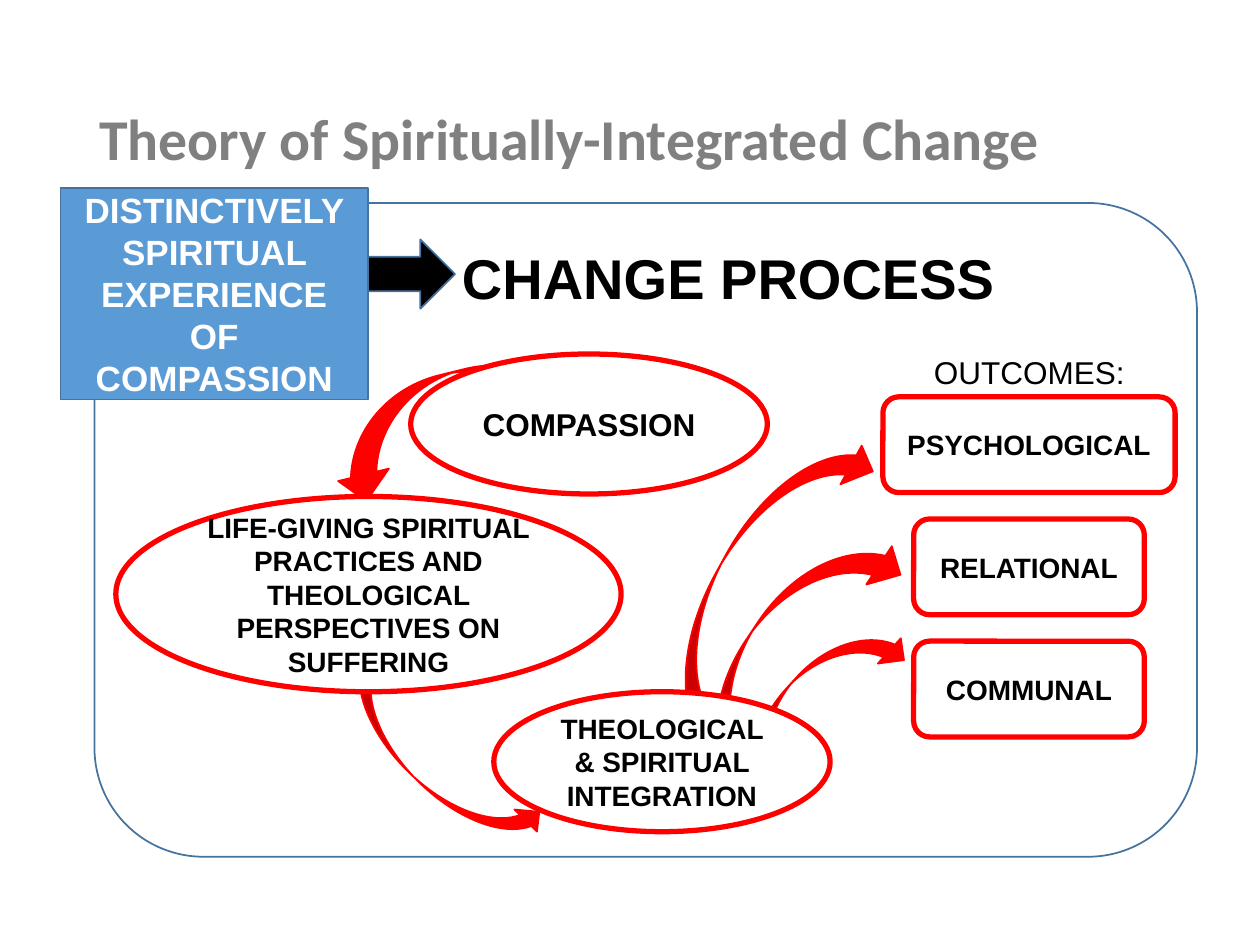
from pptx import Presentation
from pptx.dml.color import RGBColor
from pptx.enum.shapes import MSO_SHAPE as Form
from pptx.enum.text import MSO_ANCHOR as Anchor, PP_ALIGN as Align
from pptx.util import Pt

RED, BLUE, NAVY = "FF0000", "5B9BD5", "43739E"
BLACK, WHITE, GRAY = "000000", "FFFFFF", "808080"


def tint(hue):
    return RGBColor.from_string(hue)


class Deck:
    font = {"name": "Arial", "size": 16, "bold": True}

    def __init__(self, wide, high):
        self.prs = Presentation()
        self.prs.slide_width, self.prs.slide_height = Pt(wide), Pt(high)
        self.slide = self.prs.slides.add_slide(self.prs.slide_layouts[6])

    def words(self, shape, text, hue, align=Align.CENTER, **look):
        """Put styled text in a shape and return its paragraph."""
        frame = shape.text_frame
        frame.word_wrap = True
        para = frame.paragraphs[0]
        para.alignment = align
        run = para.add_run()
        run.text = text
        look = {**self.font, **look}
        look["size"] = Pt(look["size"])
        for key, value in look.items():
            setattr(run.font, key, value)
        run.font.color.rgb = tint(hue)
        return para

    def shape(self, form, box, fill=WHITE, line=RED, width=3):
        item = self.slide.shapes.add_shape(form, *map(Pt, box))
        item.shadow.inherit = False
        item.fill.solid()
        item.fill.fore_color.rgb = tint(fill)
        item.line.color.rgb = tint(line)
        item.line.width = Pt(width)
        return item

    def node(self, form, box, text, **look):
        self.words(self.shape(form, box), text, BLACK, **look)

    def curve(self, box, turn, flip=False):
        item = self.shape(Form.CURVED_RIGHT_ARROW, box, RED, RED, 1)
        item.rotation = turn
        if flip:
            item.element.spPr.xfrm.set("flipH", "1")

    def label(self, box, text, hue=BLACK, anchor=Anchor.TOP, **look):
        item = self.slide.shapes.add_textbox(*map(Pt, box))
        item.text_frame.vertical_anchor = anchor
        return self.words(item, text, hue, **look)


def main():
    deck = Deck(720, 540)
    deck.shape(Form.ROUNDED_RECTANGLE, (54, 116, 630, 373.6), line=NAVY, width=1)

    for box, turn, flip in (
        ((232.6, 360.7, 36, 144), 314.4, False),
        ((231.8, 166.3, 59.8, 152.6), 76.1, False),
        ((410.4, 234, 50.4, 195.1), 208.9, True),
        ((427, 288.7, 52.6, 167.8), 213.8, True),
        ((448.6, 341.3, 38.9, 121), 222.2, True),
    ):
        deck.curve(box, turn, flip)

    title = deck.label((49.7, 28.8, 620.6, 104.4),
                       "Theory of Spiritually-Integrated Change", GRAY,
                       Anchor.MIDDLE, align=Align.LEFT, name="Calibri", size=33)
    title.line_spacing = 0.9
    deck.label((239.8, 135.4, 352.8, 46), "CHANGE PROCESS", size=32)

    deck.shape(Form.RIGHT_ARROW, (203.8, 136.8, 56.2, 39.6), BLACK, NAVY, 1)
    source = deck.shape(Form.RECTANGLE, (34.6, 107.3, 175.7, 121), BLUE, NAVY, 1)
    deck.words(source, "DISTINCTIVELY SPIRITUAL EXPERIENCE OF COMPASSION",
               WHITE, size=20)

    for box, text, size in (
        ((234.7, 202.3, 203.8, 80), "COMPASSION", 18),
        ((66.2, 283.7, 288.7, 111.6),
         "LIFE-GIVING SPIRITUAL PRACTICES AND THEOLOGICAL "
         "PERSPECTIVES ON SUFFERING", 16),
        ((282.2, 395.3, 192.2, 80),
         "THEOLOGICAL & SPIRITUAL INTEGRATION", 16),
    ):
        deck.node(Form.OVAL, box, text, size=size)

    deck.label((522.7, 198, 131, 28.8), "OUTCOMES:", size=18, bold=False)
    mid, top, step = 588, 226.8, 69.8
    goals = ("PSYCHOLOGICAL", 167), ("RELATIONAL", 131.8), ("COMMUNAL", 131.8)
    for row, (text, wide) in enumerate(goals):
        box = mid - wide / 2, top + row * step, wide, 54.7
        deck.node(Form.ROUNDED_RECTANGLE, box, text)

    deck.prs.save("out.pptx")


if __name__ == "__main__":
    main()
